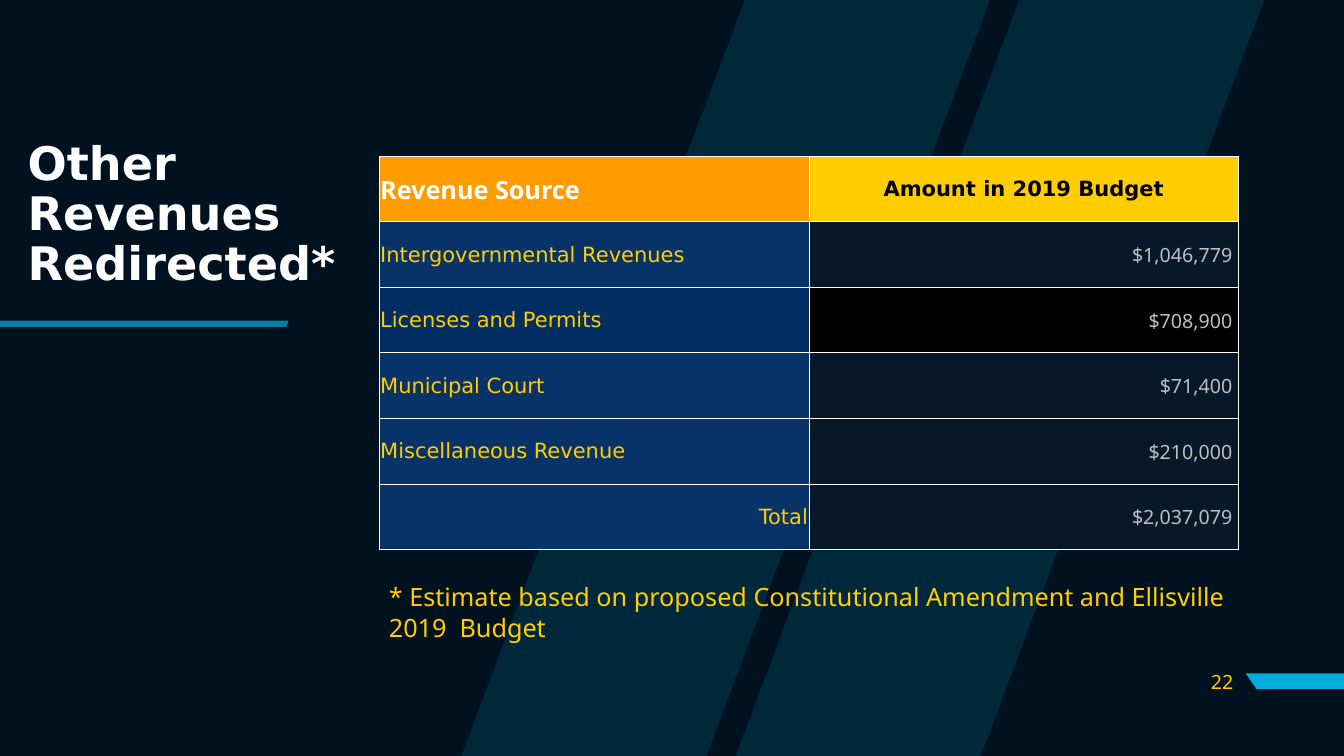
from lxml import etree
from pptx import Presentation
from pptx.dml.color import RGBColor
from pptx.enum import text as t
from pptx.oxml import ns
from pptx.util import Pt

NIGHT = RGBColor(0x00, 0x11, 0x1F)
CYAN = RGBColor(0x00, 0xAE, 0xDE)
WHITE = RGBColor(0xFF, 0xFF, 0xFF)
BLACK = RGBColor(0x00, 0x00, 0x00)
GOLD = RGBColor(0xFF, 0xCD, 0x00)
AMBER = RGBColor(0xFF, 0x9D, 0x00)
GREY = RGBColor(0xBF, 0xBF, 0xBF)
BLUE = RGBColor(0x07, 0x33, 0x68)
NAVY = RGBColor(0x00, 0x2E, 0x62)
INK = RGBColor(0x07, 0x18, 0x28)
SANS, NOTO = "DejaVu Sans", "Noto Sans"
LEFT, MID, RIGHT = t.PP_ALIGN.LEFT, t.PP_ALIGN.CENTER, t.PP_ALIGN.RIGHT

deck = Presentation()
deck.slide_width, deck.slide_height = Pt(960), Pt(540)
slide = deck.slides.add_slide(deck.slide_layouts[5])
slide.background.fill.solid()
slide.background.fill.fore_color.rgb = NIGHT


def draw(rings, alpha):
    """Draw closed outlines as one cyan shape; alpha is in percent."""
    rings = [[(Pt(x), Pt(y)) for x, y in ring] for ring in rings]
    pen = slide.shapes.build_freeform(*rings[0][0])
    for n, ring in enumerate(rings):
        if n:
            pen.move_to(*ring[0])
        pen.add_line_segments(ring[1:], close=True)
    form = pen.convert_to_shape()
    form.shadow.inherit = False
    form.line.fill.background()
    form.fill.solid()
    form.fill.fore_color.rgb = CYAN
    if alpha < 100:
        tint = form.fill._xPr.find(".//" + ns.qn("a:srgbClr"))
        etree.SubElement(tint, ns.qn("a:alpha"), val=str(alpha * 1000))


def write(frame, words, align, size, face, color, bold=False):
    """Put one formatted line of text in a frame."""
    para = frame.paragraphs[0]
    para.alignment = align
    run = para.add_run()
    run.text = words
    run.font.color.rgb = color
    look = {"size": Pt(size), "name": face, "bold": bold}
    for key, val in look.items():
        setattr(run.font, key, val)


# Slanted stripes and accent bars
draw([[(x, 0), (x - 202.4, 540), (x - 27.4, 540), (x + 175, 0)]
      for x in (728, 532)], 15)
draw([[(960, 481), (960, 492), (897.4, 492), (889.8, 481)]], 100)
draw([[(0, 229), (0, 233.5), (204.5, 233.5), (206, 229)]], 70)

# Title
title = slide.shapes.title
place = {"left": 12.5, "top": 81.5, "width": 240.5, "height": 144.5}
for key, val in place.items():
    setattr(title, key, Pt(val))
title.text_frame.word_wrap = True
title.text_frame.vertical_anchor = t.MSO_ANCHOR.MIDDLE
title.text_frame.paragraphs[0].line_spacing = 0.9
write(title.text_frame, "Other Revenues Redirected*", LEFT, 33, SANS, WHITE, True)

# Revenue table
rows = [
    ("Revenue Source", "Amount in 2019 Budget"),
    ("Intergovernmental Revenues", "$1,046,779 "),
    ("Licenses and Permits", "$708,900 "),
    ("Municipal Court", "$71,400 "),
    ("Miscellaneous Revenue", "$210,000 "),
    ("Total", "$2,037,079 "),
]
heads = [(LEFT, 18, NOTO, WHITE, True), (MID, 15, SANS, BLACK, True)]
fills = [(AMBER, GOLD), (BLUE, INK), (NAVY, BLACK)] + [(BLUE, INK)] * 3
grid = slide.shapes.add_table(len(rows), 2, Pt(270.9), Pt(111.6),
                              Pt(613.8), Pt(280.8)).table
for col in grid.columns:
    col.width = Pt(306.9)
pads = {"margin_left": Pt(0.7), "margin_right": Pt(0.7),
        "margin_top": Pt(0.7), "margin_bottom": Pt(0),
        "vertical_anchor": t.MSO_ANCHOR.MIDDLE}
for r, row in enumerate(rows):
    grid.rows[r].height = Pt(46.8)
    side = RIGHT if row[0] == "Total" else LEFT
    body = [(side, 15, SANS, GOLD), (RIGHT, 14, NOTO, GREY)]
    for c, words in enumerate(row):
        cell = grid.cell(r, c)
        for key, val in pads.items():
            setattr(cell, key, val)
        write(cell.text_frame, words, *(body if r else heads)[c])
        # Borders, heavier under the header row
        for edge in "LRTB":
            thick = (r, edge) in ((0, "B"), (1, "T"))
            rule = etree.SubElement(cell._tc.get_or_add_tcPr(), ns.qn("a:ln" + edge),
                                    w=str(Pt(0.96 if thick else 0.5)))
            ink = etree.SubElement(rule, ns.qn("a:solidFill"))
            etree.SubElement(ink, ns.qn("a:srgbClr"), val=str(WHITE))
        cell.fill.solid()
        cell.fill.fore_color.rgb = fills[r][c]

# Page number and footnote
note = "* Estimate based on proposed Constitutional Amendment and Ellisville 2019  Budget"
for box, anchor, style in (
    ((844.5, 472.5, 43.5, 28.5), t.MSO_ANCHOR.MIDDLE, ("22", RIGHT, 14)),
    ((270.7, 412, 642, 50.5), t.MSO_ANCHOR.TOP, (note, LEFT, 18)),
):
    frame = slide.shapes.add_textbox(*map(Pt, box)).text_frame
    frame.word_wrap = True
    frame.vertical_anchor = anchor
    write(frame, *style, NOTO, GOLD)

deck.save("out.pptx")
